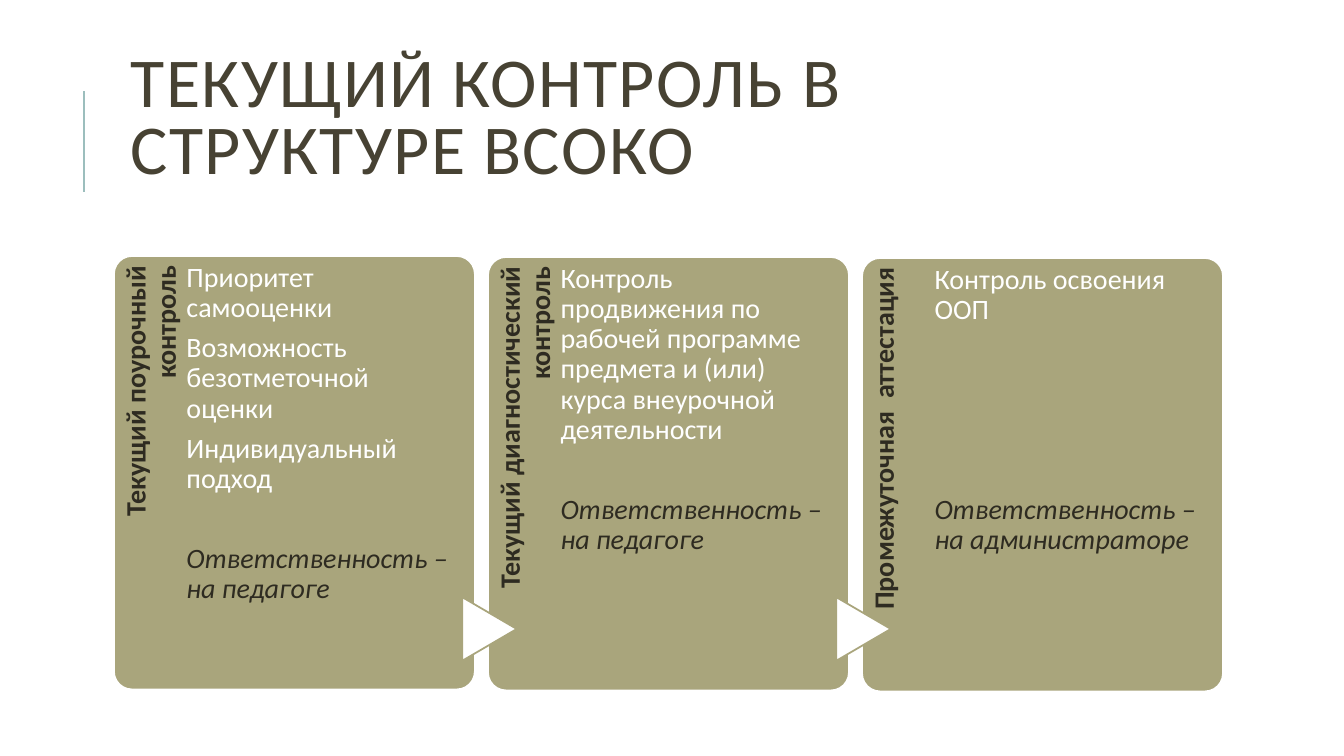
from lxml import etree
from pptx import Presentation
from pptx.dml.color import RGBColor
from pptx.enum.shapes import MSO_CONNECTOR, MSO_SHAPE
from pptx.enum.text import MSO_ANCHOR, PP_ALIGN
from pptx.oxml.ns import qn
from pptx.util import Inches, Pt

COLORS = {"olive": "A9A57C", "white": "FFFFFF", "dark": "2E2B21",
          "title": "474233", "accent": "9CBEBD"}
FONT = "Calibri"
BLANK_LINE = 28.5  # points taken by one empty line of body text

CARDS = [
    ("Текущий поурочный контроль",
     ["Приоритет самооценки", "Возможность безотметочной оценки",
      "Индивидуальный подход"],
     "Ответственность – на педагоге", 1),
    ("Текущий диагностический контроль",
     ["Контроль продвижения по рабочей программе предмета и (или) "
      "курса внеурочной деятельности"],
     "Ответственность – на педагоге", 1),
    ("Промежуточная  аттестация",
     ["Контроль освоения ООП"],
     "Ответственность – на администраторе", 4),
]
CARD_WIDTH, CARD_HEIGHT, CARD_PITCH = 3.58, 4.3, 3.71


def add_text(box, lines, margins, spacing=0.9, after=7):
    """Fill box with (text, size, color) lines and return their paragraphs."""
    frame = box.text_frame
    frame.word_wrap = True
    (frame.margin_left, frame.margin_top,
     frame.margin_right, frame.margin_bottom) = map(Inches, margins)
    paragraphs = []
    for number, (text, size, color) in enumerate(lines):
        paragraph = frame.add_paragraph() if number else frame.paragraphs[0]
        paragraph.line_spacing = spacing
        paragraph.space_after = Pt(after)
        run = paragraph.add_run()
        run.text = text
        run.font.name = FONT
        run.font.size = Pt(size)
        run.font.color.rgb = RGBColor.from_string(COLORS[color])
        paragraphs.append(paragraph)
    return paragraphs


def add_filled(kind, left, top, width, height, fill, line):
    shape = slide.shapes.add_shape(kind, Inches(left), Inches(top),
                                   Inches(width), Inches(height))
    shape.shadow.inherit = False
    shape.fill.solid()
    shape.fill.fore_color.rgb = RGBColor.from_string(COLORS[fill])
    shape.line.color.rgb = RGBColor.from_string(COLORS[line])
    shape.line.width = Pt(1.25)
    return shape


presentation = Presentation()
presentation.slide_width = Inches(13.33)
presentation.slide_height = Inches(7.5)
slide = presentation.slides.add_slide(presentation.slide_layouts[6])

# Title with its accent line
accent = slide.shapes.add_connector(MSO_CONNECTOR.STRAIGHT, Inches(0.83),
                                    Inches(1.9), Inches(0.83), Inches(0.9))
accent.line.color.rgb = RGBColor.from_string(COLORS["accent"])
accent.line.width = Pt(1.5)
etree.SubElement(accent._element.spPr, qn("a:effectLst"))

title = slide.shapes.add_textbox(Inches(1.2), Inches(0.38),
                                 Inches(10.63), Inches(1.64))
title.text_frame.vertical_anchor = MSO_ANCHOR.MIDDLE
title_paragraph, = add_text(
    title, [("ТЕКУЩИЙ КОНТРОЛЬ В СТРУКТУРЕ ВСОКО", 50, "title")],
    (0.1, 0.05, 0.1, 0.05), spacing=0.8, after=0)
title_paragraph.runs[0].font._element.set("spc", "100")

# Cards, each with a vertical label and an arrow from the card before it
for index, (label_text, points, duty, blank_lines) in enumerate(CARDS):
    left = 1.13 + index * CARD_PITCH
    top = 2.54 + index * 0.01
    card = add_filled(MSO_SHAPE.ROUNDED_RECTANGLE, left, top,
                      CARD_WIDTH, CARD_HEIGHT, "olive", "white")
    card.adjustments[0] = 0.05

    label = slide.shapes.add_textbox(Inches(left - 1.4), Inches(top + 1.4),
                                     Inches(3.53), Inches(0.72))
    label.rotation = 270
    label_paragraph, = add_text(label, [(label_text, 20, "dark")],
                                (0, 0.07, 0.1, 0))
    label_paragraph.alignment = PP_ALIGN.RIGHT
    label_paragraph.runs[0].font.bold = True

    if index:
        arrow = add_filled(MSO_SHAPE.FLOWCHART_EXTRACT, left - 0.3, 5.97,
                           0.63, 0.54, "white", "olive")
        arrow.rotation = 90

    body = slide.shapes.add_textbox(Inches(left + 0.72), Inches(top),
                                    Inches(2.67), Inches(CARD_HEIGHT))
    lines = [(point, 20, "white") for point in points] + [(duty, 20, "dark")]
    duty_paragraph = add_text(body, lines, (0, 0.07, 0, 0))[-1]
    duty_paragraph.space_before = Pt(blank_lines * BLANK_LINE)
    duty_paragraph.runs[0].font.italic = True

presentation.save("out.pptx")
